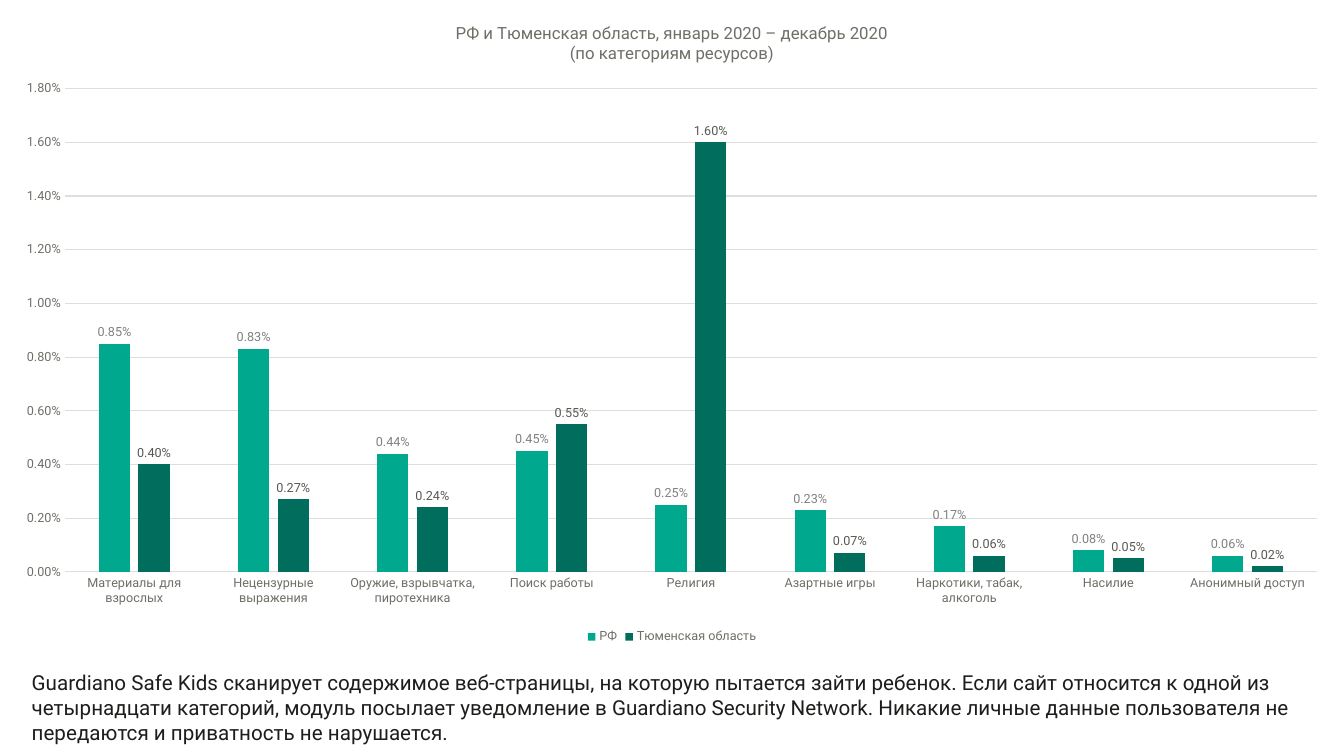
from pptx import Presentation
from pptx.chart.data import CategoryChartData
from pptx.dml.color import RGBColor
from pptx.enum.chart import (XL_CHART_TYPE, XL_LABEL_POSITION,
                             XL_LEGEND_POSITION, XL_TICK_MARK)
from pptx.util import Pt

FACE = "Roboto"
FORMAT = "0.00%"
GREY = RGBColor(0x6F, 0x6F, 0x68)
RULE = RGBColor(0xDE, 0xDE, 0xDC)
INK = RGBColor(0x1D, 0x1D, 0x1B)
MINT = RGBColor(0x00, 0xA8, 0x8E)
PINE = RGBColor(0x00, 0x6D, 0x5D)
SILVER = RGBColor(0x80, 0x80, 0x80)
SLATE = RGBColor(0x58, 0x58, 0x52)

WIDTH, HEIGHT = 960, 540

TITLE = ("РФ и Тюменская область, январь 2020 – декабрь 2020",
         "(по категориям ресурсов)")
NOTE = ("Guardiano Safe Kids сканирует содержимое веб-страницы, на которую "
        "пытается зайти ребенок. Если сайт относится к одной из четырнадцати "
        "категорий, модуль посылает уведомление в Guardiano Security Network. "
        "Никакие личные данные пользователя не передаются и приватность "
        "не нарушается.")

# Category, share in Russia, share in the region
SHARES = [
    ("Материалы для взрослых", 0.0085, 0.0040),
    ("Нецензурные выражения", 0.0083, 0.0027),
    ("Оружие, взрывчатка, пиротехника", 0.0044, 0.0024),
    ("Поиск работы", 0.0045, 0.0055),
    ("Религия", 0.0025, 0.0160),
    ("Азартные игры", 0.0023, 0.0007),
    ("Наркотики, табак, алкоголь", 0.0017, 0.0006),
    ("Насилие", 0.0008, 0.0005),
    ("Анонимный доступ", 0.0006, 0.0002),
]
# Series name, bar colour, label colour
SERIES = [("РФ", MINT, SILVER), ("Тюменская область", PINE, SLATE)]


def style(font, size=9, color=GREY, bold=False):
    font.name = FACE
    font.size = Pt(size)
    font.bold = bold
    font.color.rgb = color


def write(frame, *lines, **look):
    for index, line in enumerate(lines):
        para = frame.paragraphs[0] if index == 0 else frame.add_paragraph()
        run = para.add_run()
        run.text = line
        style(run.font, **look)


def draw_axes(chart):
    for axis in (chart.category_axis, chart.value_axis):
        axis.major_tick_mark = axis.minor_tick_mark = XL_TICK_MARK.NONE
        style(axis.tick_labels.font)
    base = chart.category_axis.format.line
    scale = chart.value_axis
    scale.format.line.fill.background()
    scale.minimum_scale, scale.maximum_scale = 0, 0.018
    scale.major_unit = 0.002
    scale.tick_labels.number_format = FORMAT
    scale.tick_labels.number_format_is_linked = False
    for line in (base, scale.major_gridlines.format.line):
        line.color.rgb = RULE
        line.width = Pt(0.75)


def draw_bars(plot):
    plot.vary_by_categories = False
    plot.gap_width, plot.overlap = 219, -27
    for series, (_, fill, ink) in zip(plot.series, SERIES):
        series.format.fill.solid()
        series.format.fill.fore_color.rgb = fill
        series.invert_if_negative = False
        labels = series.data_labels
        labels.show_value = True
        labels.position = XL_LABEL_POSITION.OUTSIDE_END
        labels.number_format = FORMAT
        labels.number_format_is_linked = False
        style(labels.font, color=ink)


def draw_chart(slide, left, top, width, height):
    data = CategoryChartData(number_format=FORMAT)
    names, *columns = zip(*SHARES)
    data.categories = names
    for (name, *_), values in zip(SERIES, columns):
        data.add_series(name, values)
    chart = slide.shapes.add_chart(
        XL_CHART_TYPE.COLUMN_CLUSTERED, Pt(left), Pt(top), Pt(width),
        Pt(height), data).chart

    # Title and legend
    write(chart.chart_title.text_frame, *TITLE, size=12)
    chart.chart_title.include_in_layout = False
    chart.has_legend = True
    chart.legend.position = XL_LEGEND_POSITION.BOTTOM
    chart.legend.include_in_layout = False
    style(chart.legend.font)

    draw_axes(chart)
    draw_bars(chart.plots[0])


def draw_note(slide, left, top, width, height):
    frame = slide.shapes.add_textbox(
        Pt(left), Pt(top), Pt(width), Pt(height)).text_frame
    frame.word_wrap = True
    frame.margin_left = frame.margin_right = Pt(9.6)
    frame.margin_top = frame.margin_bottom = Pt(4.8)
    write(frame, NOTE, size=14.7, color=INK)


def main():
    deck = Presentation()
    deck.slide_width, deck.slide_height = Pt(WIDTH), Pt(HEIGHT)
    slide = deck.slides.add_slide(deck.slide_layouts.get_by_name("Blank"))
    draw_chart(slide, 0, 0, WIDTH, 463)
    draw_note(slide, 13, 474, 934, 62)
    deck.save("out.pptx")


if __name__ == "__main__":
    main()
